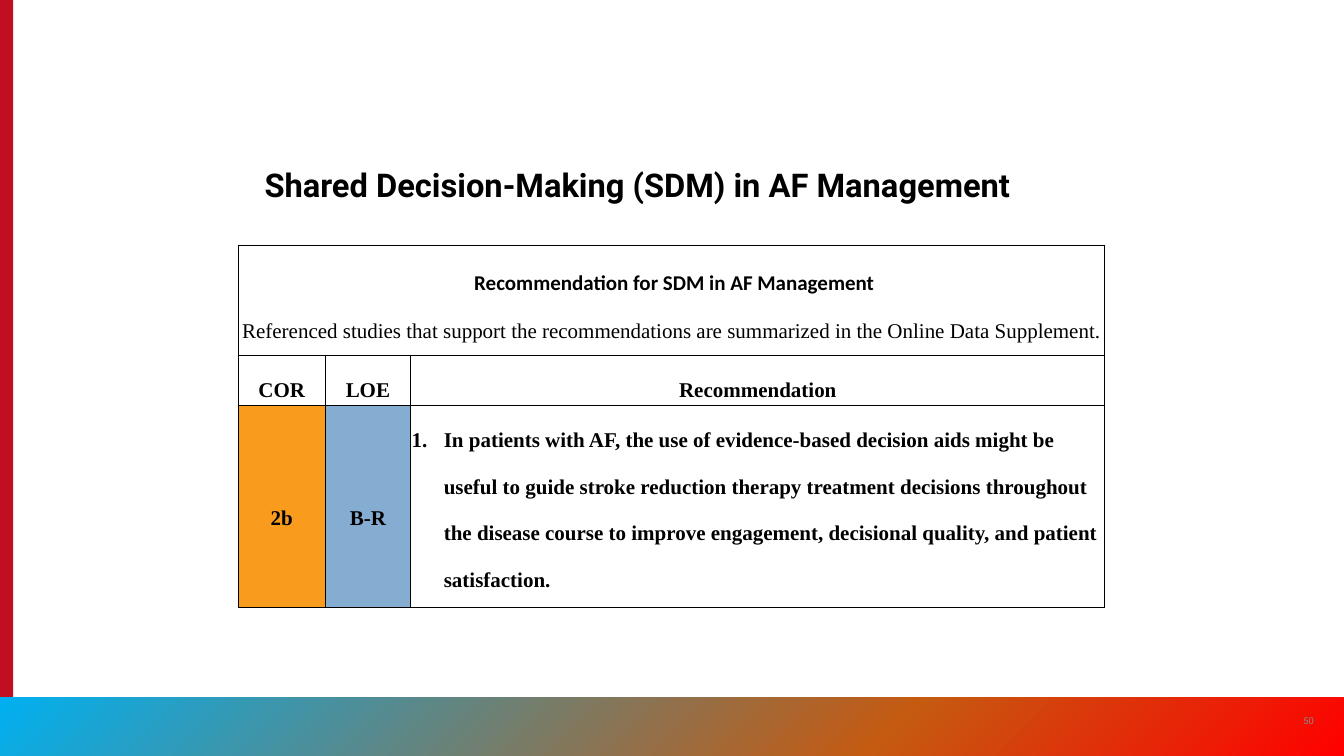
from dataclasses import dataclass

from pptx import Presentation
from pptx.dml.color import RGBColor
from pptx.enum.shapes import MSO_SHAPE as Shape
from pptx.enum.text import MSO_ANCHOR as Anchor, PP_ALIGN as Align
from pptx.oxml import parse_xml
from pptx.oxml.ns import nsdecls
from pptx.util import Cm, Pt


@dataclass(frozen=True)
class Theme:
    black: str = "000000"
    grey: str = "8A8B8A"
    red: str = "C10E21"
    orange: str = "F99B1C"
    blue: str = "85ADD1"
    footer_stops: tuple = ((0, "00B0F0"), (66, "C55A11"), (100, "FF0000"))
    heading_font: str = "Roboto"
    caption_font: str = "Calibri"
    table_font: str = "Times New Roman"
    title_size: int = 28
    table_size: int = 18
    number_size: int = 8


class SlideBuilder:
    def __init__(self, deck, theme):
        self.theme = theme
        self.page = deck.slides.add_slide(deck.slide_layouts[6])

    def bar(self, left, top, width, height, color=None, stops=()):
        """Add a plain rectangle with a solid or diagonal gradient fill."""
        shape = self.page.shapes.add_shape(
            Shape.RECTANGLE, Cm(left), Cm(top), Cm(width), Cm(height))
        shape.shadow.inherit = False
        shape.line.fill.background()
        shape.fill.solid()
        if color:
            shape.fill.fore_color.rgb = RGBColor.from_string(color)
        if stops:
            marks = "".join(
                f'<a:gs pos="{percent * 1000}"><a:srgbClr val="{tint}"/></a:gs>'
                for percent, tint in stops)
            properties = shape._element.spPr
            solid = properties.find("{*}solidFill")
            properties.replace(solid, parse_xml(
                f'<a:gradFill {nsdecls("a")} rotWithShape="1"><a:gsLst>{marks}</a:gsLst>'
                '<a:lin ang="2700000" scaled="0"/></a:gradFill>'))

    def add_span(self, para, text, size, font, color, bold=False):
        """Add one styled run to a paragraph."""
        span = para.add_run()
        span.text = text
        span.font.size = Pt(size)
        span.font.name = font
        span.font.bold = bold
        span.font.color.rgb = RGBColor.from_string(color)

    def text(self, left, top, width, height, text, size, color, inset=0.0,
             anchor=Anchor.MIDDLE, align=Align.LEFT, bold=False, spacing=1.0):
        """Add a one-paragraph text box in the heading font."""
        box = self.page.shapes.add_textbox(Cm(left), Cm(top), Cm(width), Cm(height))
        frame = box.text_frame
        frame.word_wrap = True
        frame.vertical_anchor = anchor
        frame.margin_left = frame.margin_right = Cm(inset)
        frame.margin_top = frame.margin_bottom = Cm(inset / 2)
        para = frame.paragraphs[0]
        para.alignment = align
        para.line_spacing = spacing
        self.add_span(para, text, size, self.theme.heading_font, color, bold)

    def table(self, left, top, columns, rows):
        """Add an unstyled table with the given column widths and row heights."""
        table = self.page.shapes.add_table(
            len(rows), len(columns), Cm(left), Cm(top),
            Cm(sum(columns)), Cm(sum(rows))).table
        table.first_row = table.horz_banding = False
        for column, width in zip(table.columns, columns):
            column.width = Cm(width)
        for row, height in zip(table.rows, rows):
            row.height = Cm(height)
        for cell in table.iter_cells():
            self.frame_cell(cell)
        return table

    def frame_cell(self, cell):
        """Give a cell thin black borders, tight margins and no fill."""
        cell.margin_left = cell.margin_right = Cm(0.03)
        cell.margin_top = cell.margin_bottom = 0
        properties = cell._tc.get_or_add_tcPr()
        for side in "LRTB":
            properties.append(parse_xml(
                f'<a:ln{side} {nsdecls("a")} w="{Pt(1)}"><a:solidFill>'
                f'<a:srgbClr val="{self.theme.black}"/></a:solidFill></a:ln{side}>'))
        cell.fill.background()

    def cell(self, cell, paragraphs, fill=None, anchor=Anchor.TOP, numbered=False):
        """Fill a cell; each paragraph is a list of (text, font, bold) runs."""
        cell.vertical_anchor = anchor
        if fill:
            cell.fill.solid()
            cell.fill.fore_color.rgb = RGBColor.from_string(fill)
        frame = cell.text_frame
        for index, runs in enumerate(paragraphs):
            para = frame.add_paragraph() if index else frame.paragraphs[0]
            if numbered:
                self.number(para)
            para.alignment = Align.LEFT if numbered else Align.CENTER
            para.line_spacing = 2.0
            for text, font, bold in runs:
                self.add_span(para, text, self.theme.table_size, font,
                              self.theme.black, bold)

    def number(self, para):
        """Turn a paragraph into a numbered item with a hanging indent."""
        properties = para._p.get_or_add_pPr()
        properties.set("marL", str(Cm(0.97)))
        properties.set("indent", str(-Cm(0.97)))
        properties.append(parse_xml(
            f'<a:buFont {nsdecls("a")} typeface="{self.theme.table_font}"/>'))
        properties.append(parse_xml(
            f'<a:buAutoNum {nsdecls("a")} type="arabicPeriod"/>'))


def main():
    deck = Presentation()
    deck.slide_width, deck.slide_height = Cm(40.64), Cm(22.86)
    theme = Theme()
    slide = SlideBuilder(deck, theme)

    # Side bar, footer band and page number
    slide.bar(0, 0, 0.4, 22.86, color=theme.red)
    slide.bar(0, 21.08, 40.64, 1.78, stops=theme.footer_stops)
    slide.text(38.96, 21.18, 1.22, 1.22, "50", theme.number_size, theme.grey,
               align=Align.CENTER)

    # Title
    slide.text(7.75, 4.75, 25.17, 1.55, "Shared Decision-Making (SDM) in AF Management",
               theme.title_size, theme.black, inset=0.25, anchor=Anchor.BOTTOM,
               bold=True, spacing=0.9)

    # Recommendation table: merged caption row
    serif = theme.table_font
    table = slide.table(7.21, 7.41, (2.62, 2.59, 20.99), (3.33, 1.52, 5.13))
    table.cell(0, 0).merge(table.cell(0, 2))
    slide.cell(table.cell(0, 0), [
        [(" ", serif, True),
         ("Recommendation for SDM in AF Management", theme.caption_font, True)],
        [("Referenced studies that support the recommendations are summarized "
          "in the Online Data Supplement.", serif, False)],
    ])

    # Column headings
    for column, heading in enumerate(("COR", "LOE", "Recommendation")):
        slide.cell(table.cell(1, column), [[(heading, serif, True)]])

    # Ratings and the recommendation itself
    ratings = (("2b", theme.orange), ("B-R", theme.blue))
    for column, (rating, fill) in enumerate(ratings):
        slide.cell(table.cell(2, column), [[(rating, serif, True)]], fill, Anchor.MIDDLE)
    slide.cell(table.cell(2, 2), [[(
        "In patients with AF, the use of evidence-based decision aids might be useful "
        "to guide stroke reduction therapy treatment decisions throughout the disease "
        "course to improve engagement, decisional quality, and patient satisfaction.",
        serif, True)]], numbered=True)

    deck.save("out.pptx")


if __name__ == "__main__":
    main()
